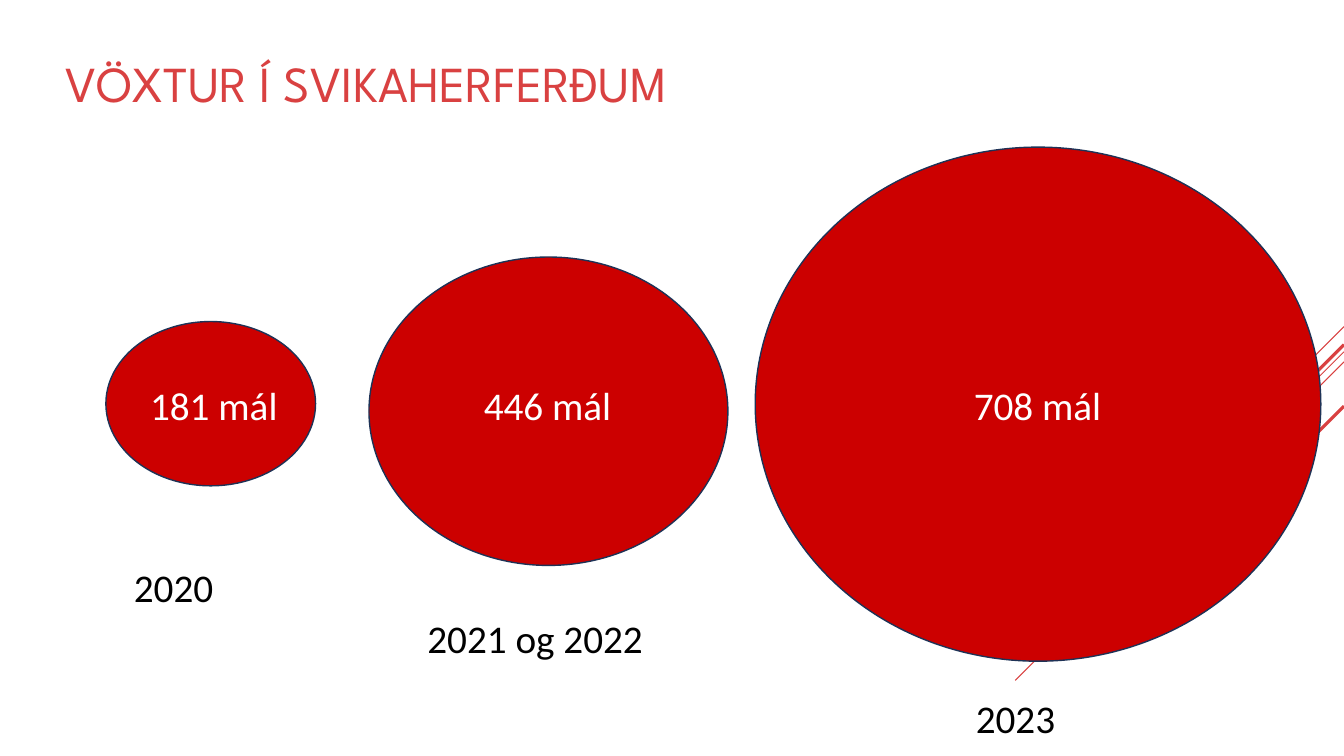
from lxml import etree
from pptx import Presentation
from pptx import util as u
from pptx.dml.color import RGBColor
from pptx.enum import shapes, text
from pptx.oxml.ns import qn

CORAL = RGBColor(0xD9, 0x41, 0x41)
RED = RGBColor(0xCC, 0x00, 0x00)
NAVY = RGBColor(0x1E, 0x32, 0x56)
WHITE = RGBColor(0xFF, 0xFF, 0xFF)
BLACK = RGBColor(0x00, 0x00, 0x00)

SLIDE_WIDTH, SLIDE_HEIGHT = 13.33, 7.5
LABEL_HEIGHT = 0.57
COUNT_TOP = 3.73

# Start height on the right edge, horizontal reach, line width
DIAGONALS = [
    (3.24, 1.0, 0.75),
    (3.49, 3.26, 0.75),
    (3.59, 2.07, 0.75),
    (3.42, 1.91, 2.25),
    (4.03, 1.39, 2.25),
]

# Ellipse box, count with left and width, year with left, top and width
PERIODS = [
    ((1.05, 3.19, 2.08, 1.63), ("181 mál", 1.39, 1.49), ("2020", 1.23, 5.54, 1.66)),
    ((3.66, 2.55, 3.56, 3.06), ("446 mál", 4.7, 1.59), ("2021 og 2022", 4.14, 6.05, 2.52)),
    ((7.49, 1.46, 5.61, 5.1), ("708 mál", 9.56, 2.21), ("2023", 9.58, 6.84, 1.75)),
]


class SlideBuilder:
    title_format = {"name": "League Spartan", "size": u.Pt(36)}
    label_format = {"name": "Calibri", "size": u.Pt(28)}

    def __init__(self, slide):
        self.shapes = slide.shapes

    def diagonal(self, top, reach, width):
        """Draw a 45-degree line down and left from the right slide edge."""
        ends = (SLIDE_WIDTH, top, SLIDE_WIDTH - reach, top + reach)
        line = self.shapes.add_connector(
            shapes.MSO_CONNECTOR.STRAIGHT, *map(u.Inches, ends))
        line.line.color.rgb = CORAL
        line.line.width = u.Pt(width)
        etree.SubElement(line._element.spPr, qn("a:effectLst"))

    def ellipse(self, bounds):
        ellipse = self.shapes.add_shape(
            shapes.MSO_SHAPE.OVAL, *map(u.Inches, bounds))
        ellipse.shadow.inherit = False
        ellipse.fill.solid()
        ellipse.fill.fore_color.rgb = RED
        ellipse.line.color.rgb = NAVY
        ellipse.line.width = u.Pt(1)

    def text(self, words, bounds, color, font_format, anchor=text.MSO_ANCHOR.TOP):
        box = self.shapes.add_textbox(*map(u.Inches, bounds))
        frame = box.text_frame
        frame.word_wrap = True
        frame.vertical_anchor = anchor
        span = frame.paragraphs[0].add_run()
        span.text = words
        for name, value in font_format.items():
            setattr(span.font, name, value)
        span.font.color.rgb = color

    def label(self, words, left, top, width, color):
        self.text(words, (left, top, width, LABEL_HEIGHT), color, self.label_format)


def main():
    deck = Presentation()
    deck.slide_width = u.Inches(SLIDE_WIDTH)
    deck.slide_height = u.Inches(SLIDE_HEIGHT)
    page = SlideBuilder(deck.slides.add_slide(deck.slide_layouts[6]))

    for diagonal in DIAGONALS:
        page.diagonal(*diagonal)

    page.text("VÖXTUR Í SVIKAHERFERÐUM", (0.55, 0.41, 10.78, 0.81), CORAL,
              page.title_format, text.MSO_ANCHOR.MIDDLE)

    for bounds, (count, count_left, count_width), year in PERIODS:
        page.ellipse(bounds)
        page.label(count, count_left, COUNT_TOP, count_width, WHITE)
        page.label(*year, BLACK)

    deck.save("out.pptx")


if __name__ == "__main__":
    main()
